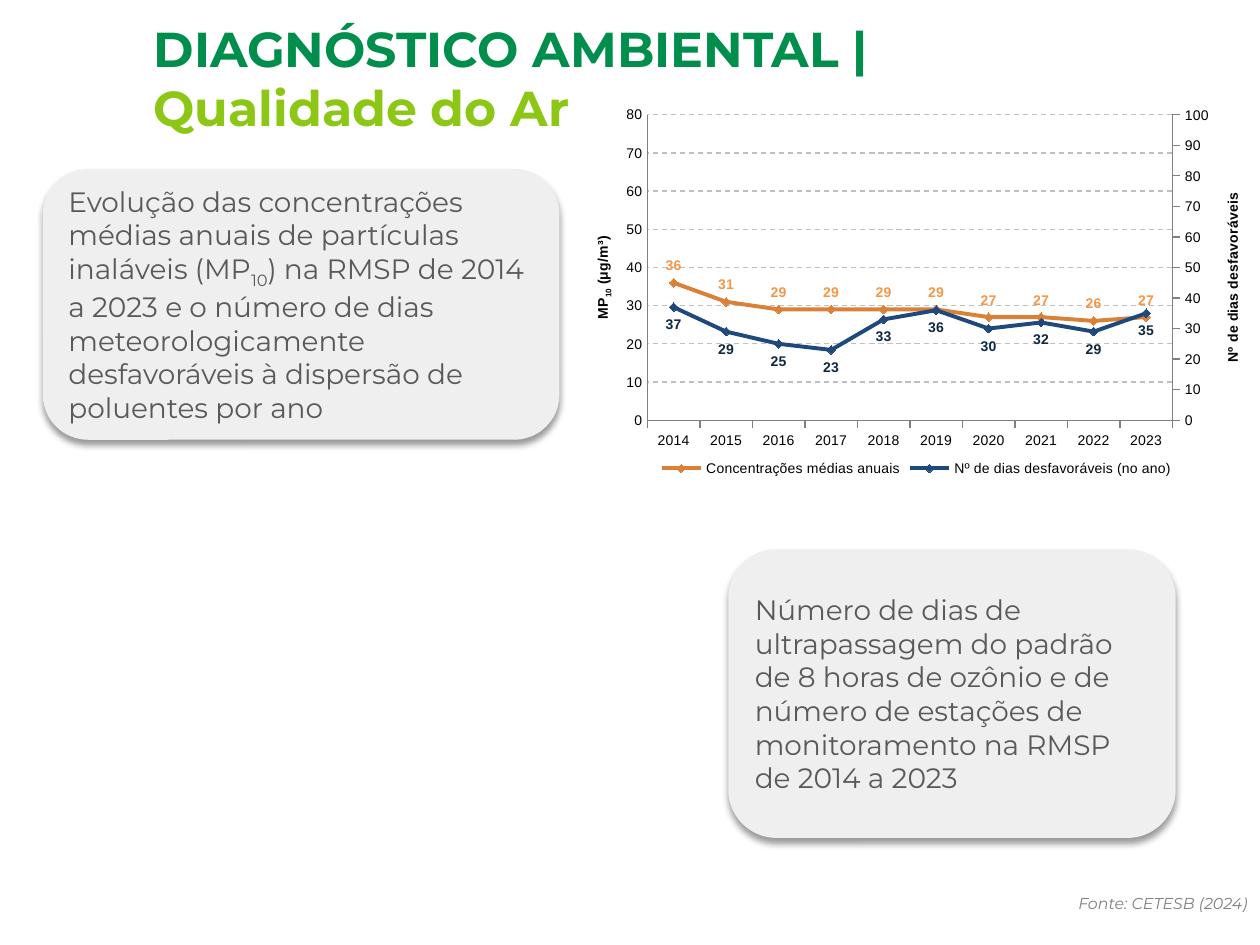
from copy import deepcopy
from dataclasses import dataclass

from lxml.etree import SubElement
from pptx import Presentation
from pptx.chart.axis import CategoryAxis, ValueAxis
from pptx.chart.data import CategoryChartData
from pptx.dml.color import RGBColor
from pptx.enum.chart import XL_CHART_TYPE as ChartType
from pptx.enum.chart import XL_LABEL_POSITION as LabelPos
from pptx.enum.chart import XL_LEGEND_POSITION as LegendPos
from pptx.enum.chart import XL_MARKER_STYLE as Marker
from pptx.enum.chart import XL_TICK_LABEL_POSITION as TickLabelPos
from pptx.enum.chart import XL_TICK_MARK as Tick
from pptx.enum.dml import MSO_LINE_DASH_STYLE as Dash
from pptx.enum.shapes import MSO_SHAPE as Shape
from pptx.enum.text import MSO_ANCHOR as Anchor
from pptx.enum.text import MSO_AUTO_SIZE as AutoSize
from pptx.enum.text import PP_ALIGN as Align
from pptx.oxml import parse_xml
from pptx.oxml.ns import nsdecls, qn
from pptx.util import Pt


@dataclass(frozen=True)
class Theme:
    font: str = "Montserrat"
    chart_font: str = "Arial"
    title: str = "008E4D"
    subtitle: str = "8DC715"
    body: str = "595959"
    source: str = "808080"
    card: str = "EFEFEF"
    axis: str = "808080"
    grid: str = "BFBFBF"
    black: str = "000000"
    white: str = "FFFFFF"
    title_size: int = 28
    body_size: int = 16
    source_size: int = 9
    chart_size: int = 8


T = Theme()
YEARS = [str(year) for year in range(2014, 2024)]
# name, values, line colour, label colour, label position
SERIES = [
    ("Concentrações médias anuais", (36, 31, 29, 29, 29, 29, 27, 27, 26, 27),
     "DA8137", "F79646", LabelPos.ABOVE),
    ("Nº de dias desfavoráveis (no ano)", (37, 29, 25, 23, 33, 36, 30, 32, 29, 35),
     "1F497D", "0E2841", LabelPos.BELOW),
]


def rgb(value):
    return RGBColor.from_string(value)


def add_run(p, text, size, color, font=T.font, bold=False, italic=False, sub=False):
    r = p.add_run()
    r.text = text
    f = r.font
    f.name, f.size, f.bold, f.italic = font, Pt(size), bold, italic
    f.color.rgb = rgb(color)
    if sub:
        r._r.get_or_add_rPr().set("baseline", "-25000")


def place(sp, left, top, width, height):
    sp.left, sp.top, sp.width, sp.height = Pt(left), Pt(top), Pt(width), Pt(height)


def add_title(s):
    sp = s.shapes.title
    place(sp, 80.6, 7.2, 637.2, 74.9)
    tf = sp.text_frame
    tf.word_wrap, tf.auto_size = True, AutoSize.SHAPE_TO_FIT_TEXT
    tf.vertical_anchor = Anchor.TOP
    lines = [("DIAGNÓSTICO AMBIENTAL |", T.title), ("Qualidade do Ar", T.subtitle)]
    for i, (text, color) in enumerate(lines):
        p = tf.add_paragraph() if i else tf.paragraphs[0]
        p.alignment, p.space_before = Align.LEFT, Pt(0)
        add_run(p, text, T.title_size, color, bold=True)


def add_source(s):
    tf = s.shapes.add_textbox(Pt(609.1), Pt(506.9), Pt(115.2), Pt(18)).text_frame
    tf.word_wrap, tf.auto_size = False, AutoSize.SHAPE_TO_FIT_TEXT
    add_run(tf.paragraphs[0], "Fonte: CETESB (2024)", T.source_size, T.source, italic=True)


def add_card(s, left, top, width, height, runs):
    """Add a shadowed rounded card; runs are (text, subscript) pairs."""
    sp = s.shapes.add_shape(Shape.ROUNDED_RECTANGLE, Pt(left), Pt(top), Pt(width), Pt(height))
    sp.fill.solid()
    sp.fill.fore_color.rgb = rgb(T.card)
    sp.line.fill.background()
    sp.shadow.inherit = False
    effects = sp.element.spPr.find(qn("a:effectLst"))
    shadow = SubElement(effects, qn("a:outerShdw"), blurRad=str(Pt(4)), dist=str(Pt(3)),
                        dir="5400000", rotWithShape="0")
    color = SubElement(shadow, qn("a:srgbClr"), val=T.black)
    SubElement(color, qn("a:alpha"), val="40000")
    tf = sp.text_frame
    tf.word_wrap, tf.vertical_anchor = True, Anchor.MIDDLE
    p = tf.paragraphs[0]
    p.alignment = Align.LEFT
    for text, sub in runs:
        add_run(p, text, T.body_size, T.body, sub=sub)


def style_line(line, color, width):
    line.color.rgb = rgb(color)
    line.width = Pt(width)


def set_axis_title(axis, runs):
    tf = axis.axis_title.text_frame
    tf.clear()
    tf._txBody.bodyPr.set("rot", "-5400000")
    tf._txBody.bodyPr.set("vert", "horz")
    for text, sub in runs:
        add_run(tf.paragraphs[0], text, T.chart_size, T.black, T.chart_font, bold=True, sub=sub)


def style_series(series, color, label_color, position):
    series.smooth = False
    style_line(series.format.line, color, 2.25)
    marker = series.marker
    marker.style, marker.size = Marker.DIAMOND, 5
    marker.format.fill.solid()
    marker.format.fill.fore_color.rgb = rgb(color)
    style_line(marker.format.line, color, 0.75)
    labels = series.data_labels
    labels.show_value, labels.position = True, position
    f = labels.font
    f.name, f.size, f.bold = T.chart_font, Pt(T.chart_size), True
    f.color.rgb = rgb(label_color)


def add_right_axis(chart):
    """Move the second series to a line plot of its own, with a value axis on the right."""
    left_plot = chart.plots[0]._element
    cat, val = chart.category_axis._element, chart.value_axis._element
    right_plot, right_cat, right_val = deepcopy(left_plot), deepcopy(cat), deepcopy(val)
    left_plot.remove(left_plot.findall(qn("c:ser"))[1])
    right_plot.remove(right_plot.findall(qn("c:ser"))[0])
    left_plot.addnext(right_plot)
    val.addnext(right_val)
    right_val.addnext(right_cat)

    ids = ("50010", "50020")
    for ref, value in zip(right_plot.findall(qn("c:axId")), ids):
        ref.set("val", value)
    for axis, own, other, crosses in ((right_cat, *ids, "autoZero"),
                                      (right_val, *ids[::-1], "max")):
        axis.find(qn("c:axId")).set("val", own)
        cross_ref = axis.find(qn("c:crossAx"))
        cross_ref.set("val", other)
        for old in axis.findall(qn("c:crosses")):
            axis.remove(old)
        cross_ref.addnext(parse_xml(f'<c:crosses {nsdecls("c")} val="{crosses}"/>'))
    right_val.find(qn("c:axPos")).set("val", "r")

    CategoryAxis(right_cat).visible = False
    right = ValueAxis(right_val)
    right.has_major_gridlines = False
    right.maximum_scale, right.major_tick_mark = 100, Tick.OUTSIDE
    right.tick_label_position = TickLabelPos.HIGH
    set_axis_title(right, [("Nº de dias desfavoráveis", False)])


def set_plot_layout(chart, **box):
    area = chart.element.find(".//" + qn("c:plotArea"))
    for old in area.findall(qn("c:layout")):
        area.remove(old)
    parts = {"layoutTarget": "inner", "xMode": "edge", "yMode": "edge", **box}
    body = "".join(f'<c:{name} val="{value}"/>' for name, value in parts.items())
    area.insert(0, parse_xml(f'<c:layout {nsdecls("c")}><c:manualLayout>{body}'
                             "</c:manualLayout></c:layout>"))


def add_air_chart(s):
    data = CategoryChartData(number_format="0")
    data.categories = YEARS
    for name, values, *_ in SERIES:
        data.add_series(name, values)
    chart = s.shapes.add_chart(ChartType.LINE_MARKERS, Pt(336.2), Pt(56.9), Pt(375.1),
                               Pt(218.2), data).chart
    f = chart.font
    f.name, f.size = T.chart_font, Pt(T.chart_size)
    f.color.rgb = rgb(T.black)
    chart.element.find(qn("c:txPr")).addprevious(parse_xml(
        f'<c:spPr {nsdecls("c", "a")}><a:solidFill><a:srgbClr val="{T.white}"/></a:solidFill>'
        "<a:ln><a:noFill/></a:ln></c:spPr>"))
    chart.has_title = False
    chart.has_legend = True
    chart.legend.position, chart.legend.include_in_layout = LegendPos.BOTTOM, False
    chart.plots[0].vary_by_categories = False
    for series, (_, _, *style) in zip(chart.plots[0].series, SERIES):
        style_series(series, *style)

    cat, val = chart.category_axis, chart.value_axis
    for axis, tick in ((cat, Tick.OUTSIDE), (val, Tick.NONE)):
        axis.major_tick_mark, axis.minor_tick_mark = tick, Tick.NONE
        style_line(axis.format.line, T.axis, 0.75)
    val.minimum_scale, val.maximum_scale, val.major_unit = 0, 80, 10
    val.tick_labels.number_format, val.tick_labels.number_format_is_linked = "0", False
    grid = val.major_gridlines.format.line
    style_line(grid, T.grid, 0.75)
    grid.dash_style = Dash.DASH
    set_axis_title(val, [("MP", False), ("10", True), (" (μg/m³)", False)])
    add_right_axis(chart)
    set_plot_layout(chart, x=0.09, y=0.04, w=0.8, h=0.8)


def main():
    prs = Presentation()
    prs.slide_width, prs.slide_height = Pt(720), Pt(540)
    s = prs.slides.add_slide(prs.slide_layouts[5])
    add_title(s)
    add_source(s)
    add_air_chart(s)
    add_card(s, 416.2, 313.9, 255.6, 164.9, [
        ("Número de dias de ultrapassagem do padrão de 8 horas de ozônio e de número de "
         "estações de monitoramento na RMSP de 2014 a 2023", False)])
    add_card(s, 24.5, 96.5, 295.2, 154.8, [
        ("Evolução das concentrações médias anuais de partículas inaláveis (MP", False),
        ("10", True),
        (") na RMSP de 2014 a 2023 e o número de dias meteorologicamente desfavoráveis "
         "à dispersão de poluentes por ano", False)])
    prs.save("out.pptx")


if __name__ == "__main__":
    main()
